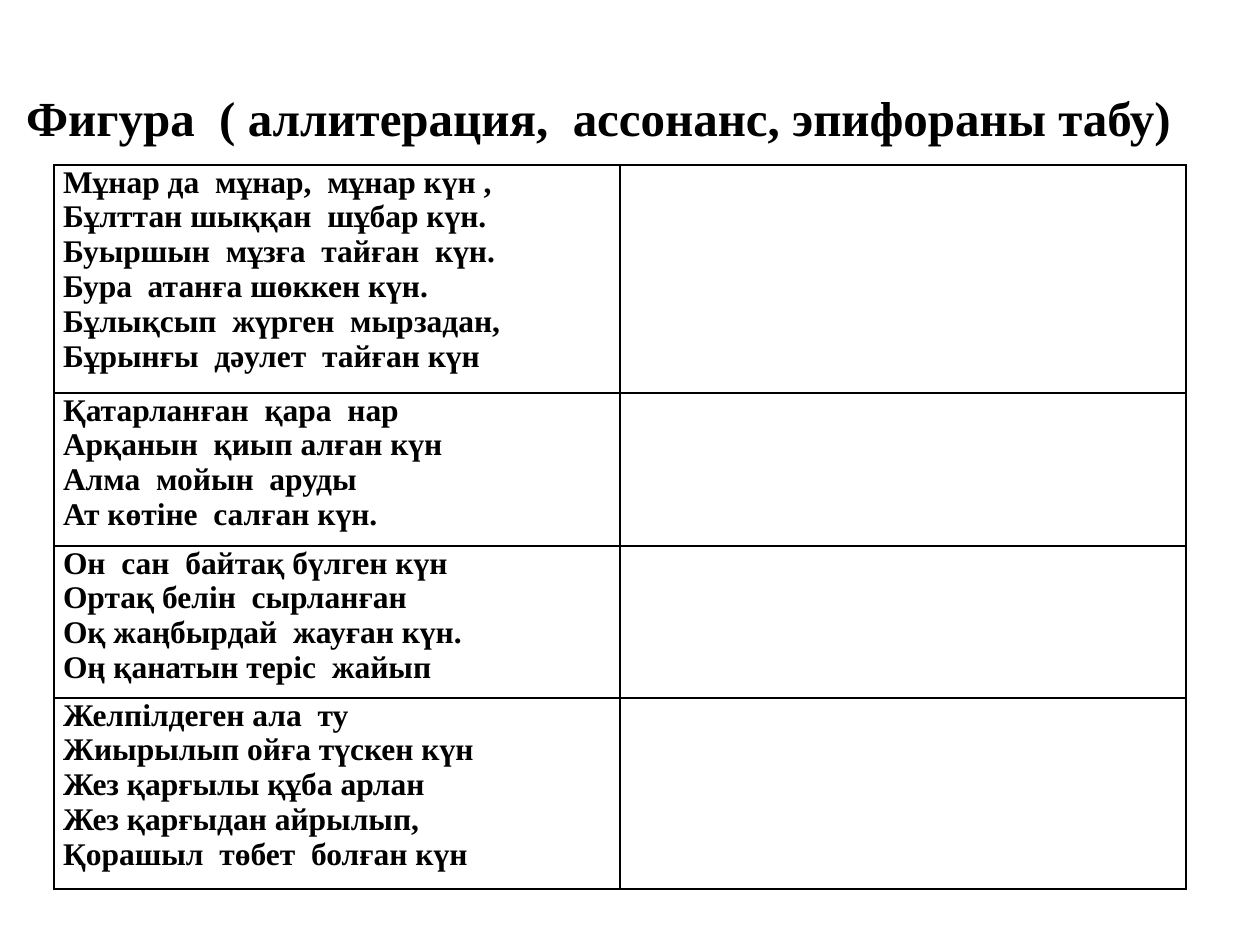
from dataclasses import dataclass

from lxml import etree
from pptx import Presentation
from pptx import util as u
from pptx.dml.color import RGBColor
from pptx.enum import text
from pptx.oxml.ns import qn

BLACK = RGBColor(0, 0, 0)
FONT = "Times New Roman"
PX_PER_INCH = 126
TITLE = "Фигура  ( аллитерация,  ассонанс, эпифораны табу)"


@dataclass(frozen=True)
class Verse:
    height: int
    lines: tuple[str, ...]


VERSES = (
    Verse(228, (
        "Мұнар да  мұнар,  мұнар күн ,",
        "Бұлттан шыққан  шұбар күн.",
        "Буыршын  мұзға  тайған  күн.",
        "Бура  атанға шөккен күн.",
        "Бұлықсып  жүрген  мырзадан,",
        "Бұрынғы  дәулет  тайған күн",
    )),
    Verse(153, (
        "Қатарланған  қара  нар",
        "Арқанын  қиып алған күн",
        "Алма  мойын  аруды",
        "Ат көтіне  салған күн.",
    )),
    Verse(152, (
        "Он  сан  байтақ бүлген күн",
        "Ортақ белін  сырланған",
        "Оқ жаңбырдай  жауған күн.",
        "Оң қанатын теріс  жайып",
    )),
    Verse(191, (
        "Желпілдеген ала  ту",
        "Жиырылып ойға түскен күн",
        "Жез қарғылы құба арлан",
        "Жез қарғыдан айрылып,",
        "Қорашыл  төбет  болған күн",
    )),
)


def px(length: int) -> u.Emu:
    return u.Emu(round(length * u.Inches(1) / PX_PER_INCH))


def set_all(target, values: dict) -> None:
    for name, value in values.items():
        setattr(target, name, value)


def write_lines(frame, lines: tuple[str, ...], size: int, align) -> None:
    for index, line in enumerate(lines):
        para = frame.paragraphs[0] if index == 0 else frame.add_paragraph()
        para.alignment = align
        span = para.add_run()
        span.text = line
        set_all(span.font, {"name": FONT, "size": u.Pt(size), "bold": True})
        span.font.color.rgb = BLACK


def add_title(page) -> None:
    box = page.shapes.add_textbox(px(0), px(38), px(1197), px(158))
    set_all(box.text_frame, {"word_wrap": True,
                             "vertical_anchor": text.MSO_ANCHOR.MIDDLE})
    write_lines(box.text_frame, (TITLE,), 28, text.PP_ALIGN.CENTER)


def outline_cell(cell) -> None:
    properties = cell._tc.get_or_add_tcPr()
    for side in ("lnL", "lnR", "lnT", "lnB"):
        line = etree.SubElement(properties, qn(f"a:{side}"), w=str(u.Pt(1)))
        fill = etree.SubElement(line, qn("a:solidFill"))
        etree.SubElement(fill, qn("a:srgbClr"), val=str(BLACK))


def add_verse_table(page) -> None:
    column_width = 566
    height = sum(verse.height for verse in VERSES)
    table = page.shapes.add_table(len(VERSES), 2, px(54), px(165),
                                  px(2 * column_width), px(height)).table
    set_all(table, {"first_row": False, "horz_banding": False})
    for column in table.columns:
        column.width = px(column_width)
    for row, verse in zip(table.rows, VERSES):
        row.height = px(verse.height)
        for cell in row.cells:
            set_all(cell, {"margin_left": px(9), "margin_right": px(9),
                           "margin_top": 0, "margin_bottom": 0})
            outline_cell(cell)
            cell.fill.background()
        write_lines(row.cells[0].text_frame, verse.lines, 18,
                    text.PP_ALIGN.LEFT)


def main() -> None:
    deck = Presentation()
    set_all(deck, {"slide_width": px(1260), "slide_height": px(945)})
    page = deck.slides.add_slide(deck.slide_layouts[6])
    add_title(page)
    add_verse_table(page)
    deck.save("out.pptx")


if __name__ == "__main__":
    main()
